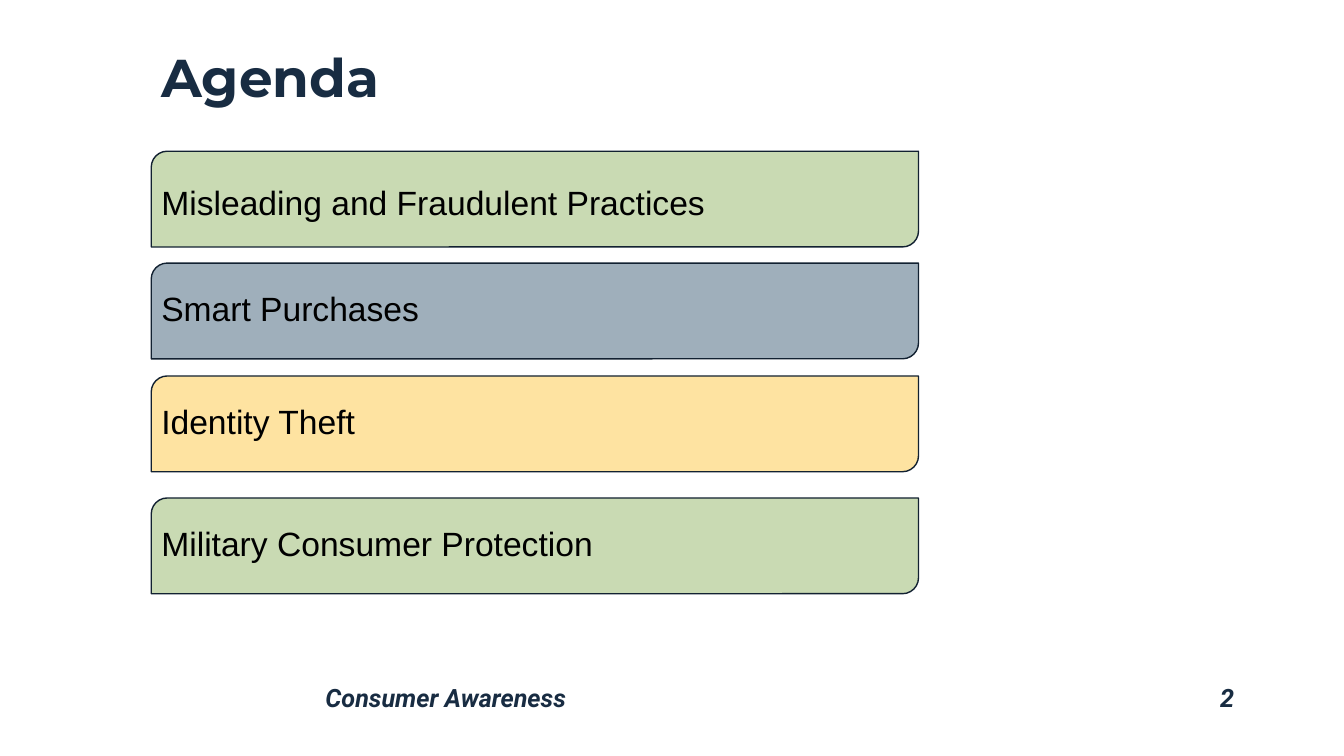
from dataclasses import dataclass

from lxml.etree import SubElement
from pptx import Presentation
from pptx.dml.color import RGBColor
from pptx.enum.shapes import MSO_SHAPE as SHAPE
from pptx.enum.text import MSO_ANCHOR as ANCHOR, MSO_AUTO_SIZE as AUTO, PP_ALIGN as ALIGN
from pptx.oxml.ns import qn
from pptx.util import Inches, Pt


@dataclass(frozen=True)
class Theme:
    navy: str = "182C42"
    outline: str = "122131"
    black: str = "000000"
    green: str = "C9DAB3"
    blue: str = "9FAFBB"
    yellow: str = "FEE3A1"
    title_font: str = "Montserrat"
    note_font: str = "Roboto"
    body_font: str = "Arial"
    title_size: int = 38
    body_size: int = 24
    note_size: int = 18


def write(sp, text, *, font, size, color, bold=False, italic=False,
          align=ALIGN.LEFT, anchor=ANCHOR.TOP):
    tf = sp.text_frame
    tf.word_wrap = True
    tf.auto_size = AUTO.NONE
    tf.vertical_anchor = anchor
    p = tf.paragraphs[0]
    pPr = p._p.get_or_add_pPr()
    pPr.set("marL", "0")
    pPr.set("indent", "0")
    SubElement(pPr, qn("a:buNone"))
    p.alignment = align
    p.line_spacing = 0.9
    p.space_before = Pt(0)
    r = p.add_run()
    r.text = text
    r.font.name = font
    r.font.size = Pt(size)
    r.font.color.rgb = RGBColor.from_string(color)
    r.font.bold = bold
    r.font.italic = italic


class Deck:
    def __init__(self, theme):
        self.theme = theme
        self.prs = Presentation()
        self.prs.slide_width = Inches(13.33)
        self.prs.slide_height = Inches(7.5)

    def add_slide(self, layout):
        self.s = self.prs.slides.add_slide(self.prs.slide_layouts[layout])

    def place(self, sp, box):
        sp.left, sp.top, sp.width, sp.height = map(Inches, box)
        return sp

    def title(self, text, box):
        t = self.theme
        write(self.place(self.s.shapes.title, box), text, font=t.title_font,
              size=t.title_size, color=t.navy, bold=True, anchor=ANCHOR.BOTTOM)

    def note(self, text, box, align=ALIGN.LEFT):
        t = self.theme
        sp = self.s.shapes.add_textbox(*map(Inches, box))
        write(sp, text, font=t.note_font, size=t.note_size, color=t.navy,
              bold=True, italic=True, align=align)

    def bar(self, fill, box):
        sp = self.s.shapes.add_shape(SHAPE.ROUND_2_DIAG_RECTANGLE, *map(Inches, box))
        sp.shadow.inherit = False
        sp.fill.solid()
        sp.fill.fore_color.rgb = RGBColor.from_string(fill)
        sp.line.color.rgb = RGBColor.from_string(self.theme.outline)
        sp.line.width = Pt(1)

    def body(self, idx, text, box, anchor):
        t = self.theme
        sp = self.place(self.s.placeholders[idx], box)
        sp.element.getparent().append(sp.element)
        write(sp, text, font=t.body_font, size=t.body_size, color=t.black, anchor=anchor)


def main():
    theme = Theme()
    deck = Deck(theme)
    deck.add_slide(4)
    left, width, bar_height = 1.5, 7.61, 0.95
    deck.title("Agenda", (left, 0.11, 10.84, 1.02))
    deck.note("Consumer Awareness", (3.13, 6.75, 7.63, 0.38))
    deck.note("2", (10.76, 6.75, 1.58, 0.38), ALIGN.RIGHT)

    agenda = [
        ("Misleading and Fraudulent Practices", theme.green, 1.5, 1.8, 0.55, ANCHOR.TOP),
        ("Smart Purchases", theme.blue, 2.61, 2.71, 0.75, ANCHOR.MIDDLE),
        ("Identity Theft", theme.yellow, 3.73, 3.73, 0.95, ANCHOR.MIDDLE),
        ("Military Consumer Protection", theme.green, 4.94, 4.94, 0.94, ANCHOR.MIDDLE),
    ]
    for idx, (text, fill, bar_top, text_top, text_height, anchor) in enumerate(agenda, 1):
        deck.bar(fill, (left, bar_top, width, bar_height))
        deck.body(idx, text, (left, text_top, width, text_height), anchor)

    deck.prs.save("out.pptx")


if __name__ == "__main__":
    main()
